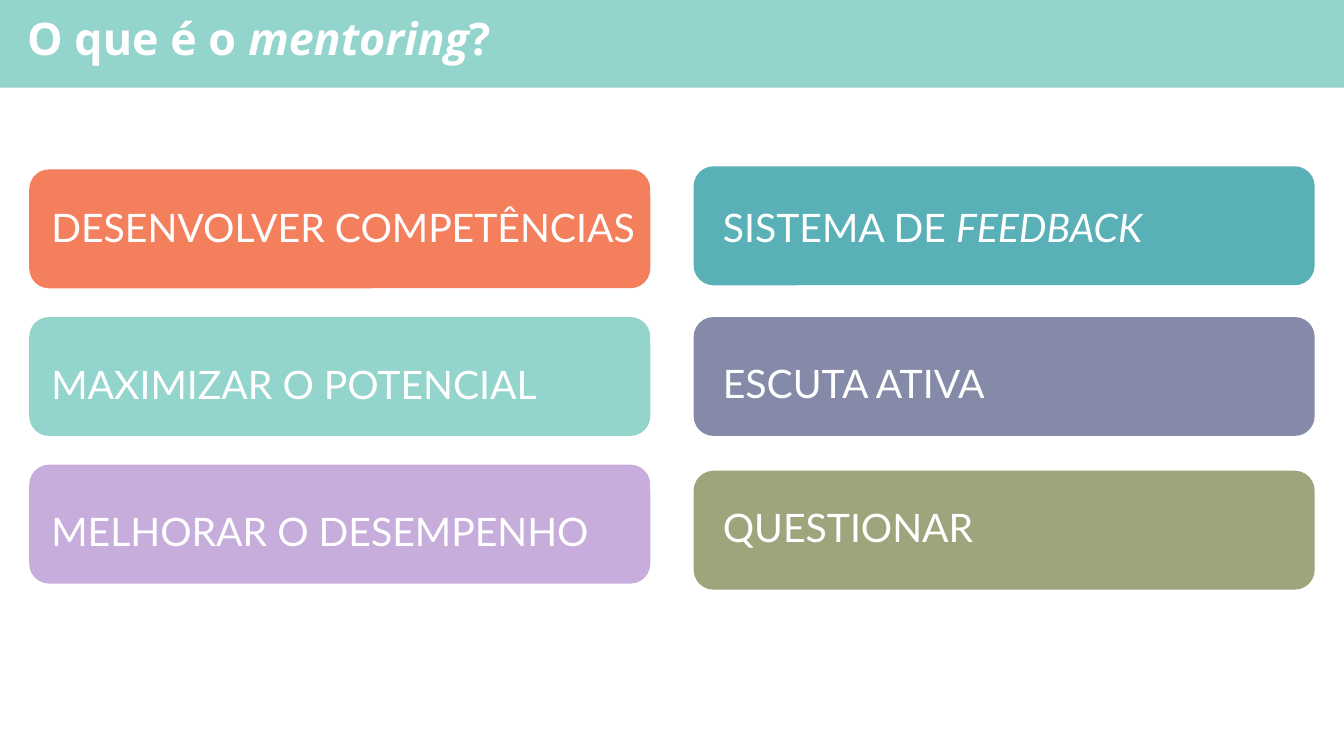
"""Build the slide that sums up mentoring in a grid of six cards."""
from dataclasses import dataclass
from typing import NamedTuple

from pptx import Presentation
from pptx.dml.color import RGBColor
from pptx.enum.shapes import MSO_SHAPE as Preset
from pptx.enum.text import MSO_ANCHOR as Anchor, MSO_AUTO_SIZE as AutoSize, PP_ALIGN as Align
from pptx.util import Inches, Pt

COLORS = {
    "white": "FFFFFF",
    "mint": "93D4CC",
    "coral": "F47F5D",
    "lilac": "C7ADDB",
    "teal": "59B0B7",
    "slate": "858AA8",
    "olive": "9DA57C",
}
SLIDE_WIDTH, SLIDE_HEIGHT = 13.33, 7.5
BAND_HEIGHT = 0.87
GRID_LEFT, GRID_TOP = 0.29, 1.68
COLUMN_STEP, ROW_STEP = 6.59, 1.465
CARD_WIDTH, CARD_HEIGHT = 6.16, 1.18
CARD_ROUNDING = 0.167
LABEL_INDENTS = (0.17, 0.24)
LABEL_HEIGHT = 0.35


class Box(NamedTuple):
    left: float
    top: float
    width: float
    height: float


class TextRun(NamedTuple):
    text: str
    italic: bool = False


@dataclass(frozen=True)
class Card:
    column: int
    row: int
    color: str
    runs: tuple[TextRun, ...]
    label_drop: float
    label_width: float = 5.36
    shift: float = 0.0


TITLE = (TextRun("O que é o "), TextRun("mentoring", True), TextRun("?"))
CARDS = (
    Card(0, 0, "coral", (TextRun("DESENVOLVER COMPETÊNCIAS"),), 0.47, 6.1),
    Card(0, 1, "mint", (TextRun("MAXIMIZAR O POTENCIAL"),), 0.57),
    Card(0, 2, "lilac", (TextRun("MELHORAR O DESEMPENHO"),), 0.56, 5.86),
    Card(1, 0, "teal", (TextRun("SISTEMA DE "), TextRun("FEEDBACK", True)), 0.5, shift=-0.03),
    Card(1, 1, "slate", (TextRun("ESCUTA ATIVA"),), 0.56),
    Card(1, 2, "olive", (TextRun("QUESTIONAR"),), 0.46, shift=0.06),
)


def rgb(name: str) -> RGBColor:
    return RGBColor.from_string(COLORS[name])


def inches(box: Box) -> tuple[Inches, ...]:
    return tuple(Inches(length) for length in box)


def add_block(slide, preset: Preset, box: Box, color: str):
    shape = slide.shapes.add_shape(preset, *inches(box))
    shape.shadow.inherit = False
    shape.fill.solid()
    shape.fill.fore_color.rgb = rgb(color)
    shape.line.fill.background()
    return shape


def write(shape, runs: tuple[TextRun, ...], font_name: str, size: int,
          bold: bool, spacing: float, inset_x: float, inset_y: float) -> None:
    frame = shape.text_frame
    frame.word_wrap = True
    frame.auto_size = AutoSize.NONE
    frame.vertical_anchor = Anchor.TOP
    frame.margin_left = frame.margin_right = Inches(inset_x)
    frame.margin_top = frame.margin_bottom = Inches(inset_y)
    paragraph = frame.paragraphs[0]
    paragraph.alignment = Align.LEFT
    paragraph.line_spacing = spacing
    paragraph.font.name = font_name
    paragraph.font.size = Pt(size)
    paragraph.font.bold = bold
    paragraph.font.color.rgb = rgb("white")
    for text, italic in runs:
        run = paragraph.add_run()
        run.text = text
        run.font.italic = italic


def add_header(slide) -> None:
    band = add_block(slide, Preset.RECTANGLE, Box(0, 0, SLIDE_WIDTH, BAND_HEIGHT), "mint")
    title = slide.shapes.title
    band.element.addnext(title.element)
    title.left, title.top, title.width, title.height = inches(Box(0.17, 0.06, 8.94, 0.64))
    write(title, TITLE, "Open Sans", 32, True, 1.0, 0.1, 0.05)


def add_card(slide, card: Card) -> None:
    left = GRID_LEFT + card.column * COLUMN_STEP
    top = GRID_TOP + card.row * ROW_STEP + card.shift
    block = add_block(slide, Preset.ROUNDED_RECTANGLE,
                      Box(left, top, CARD_WIDTH, CARD_HEIGHT), card.color)
    block.adjustments[0] = CARD_ROUNDING
    label_box = Box(left + LABEL_INDENTS[card.column], top + card.label_drop,
                    card.label_width, LABEL_HEIGHT)
    label = slide.shapes.add_textbox(*inches(label_box))
    write(label, card.runs, "Lato", 28, False, 0.62, 0.05, 0.02)


def main() -> None:
    presentation = Presentation()
    presentation.slide_width = Inches(SLIDE_WIDTH)
    presentation.slide_height = Inches(SLIDE_HEIGHT)
    title_only = presentation.slide_layouts.get_by_name("Title Only")
    slide = presentation.slides.add_slide(title_only)
    add_header(slide)
    for card in CARDS:
        add_card(slide, card)
    presentation.save("out.pptx")


if __name__ == "__main__":
    main()
